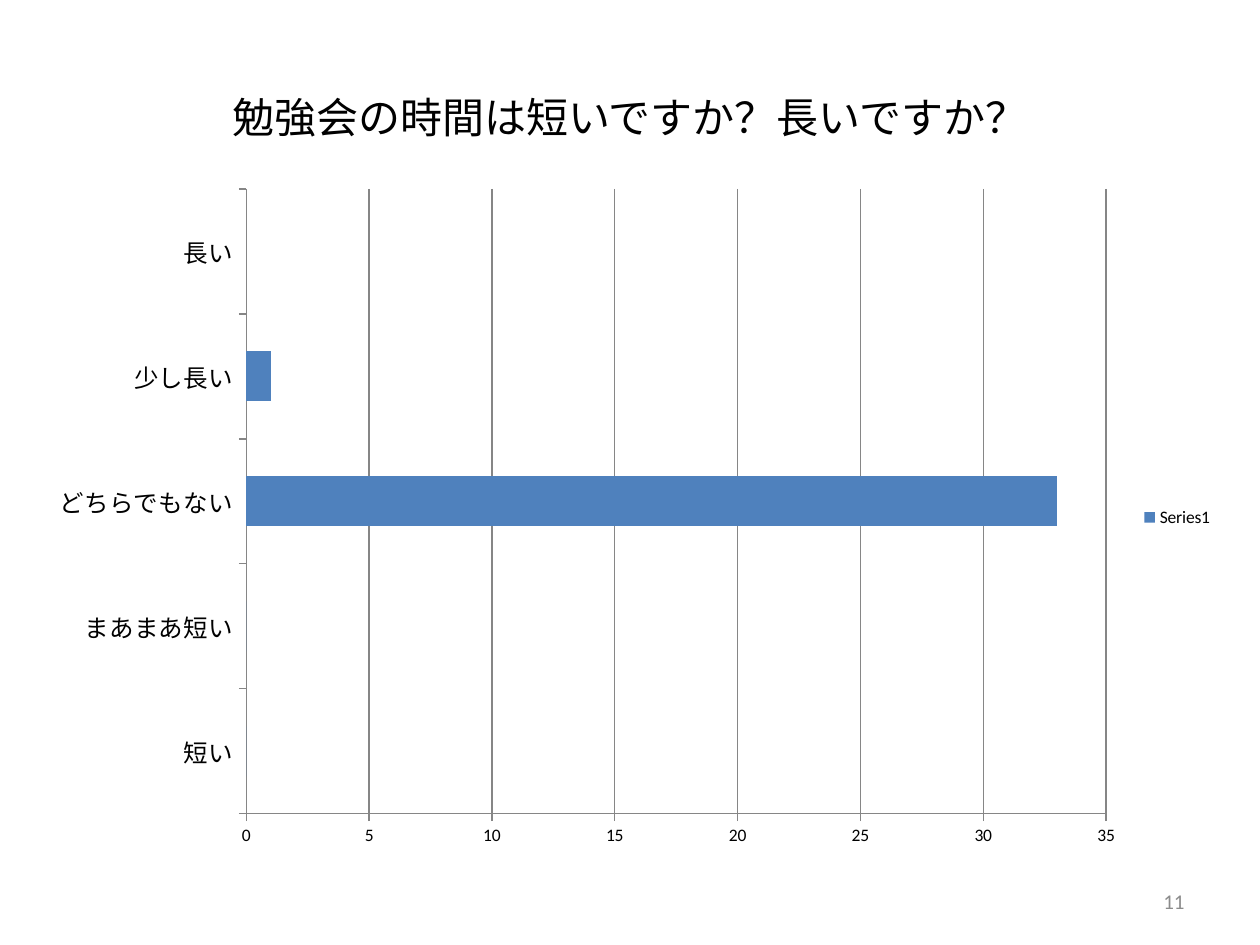
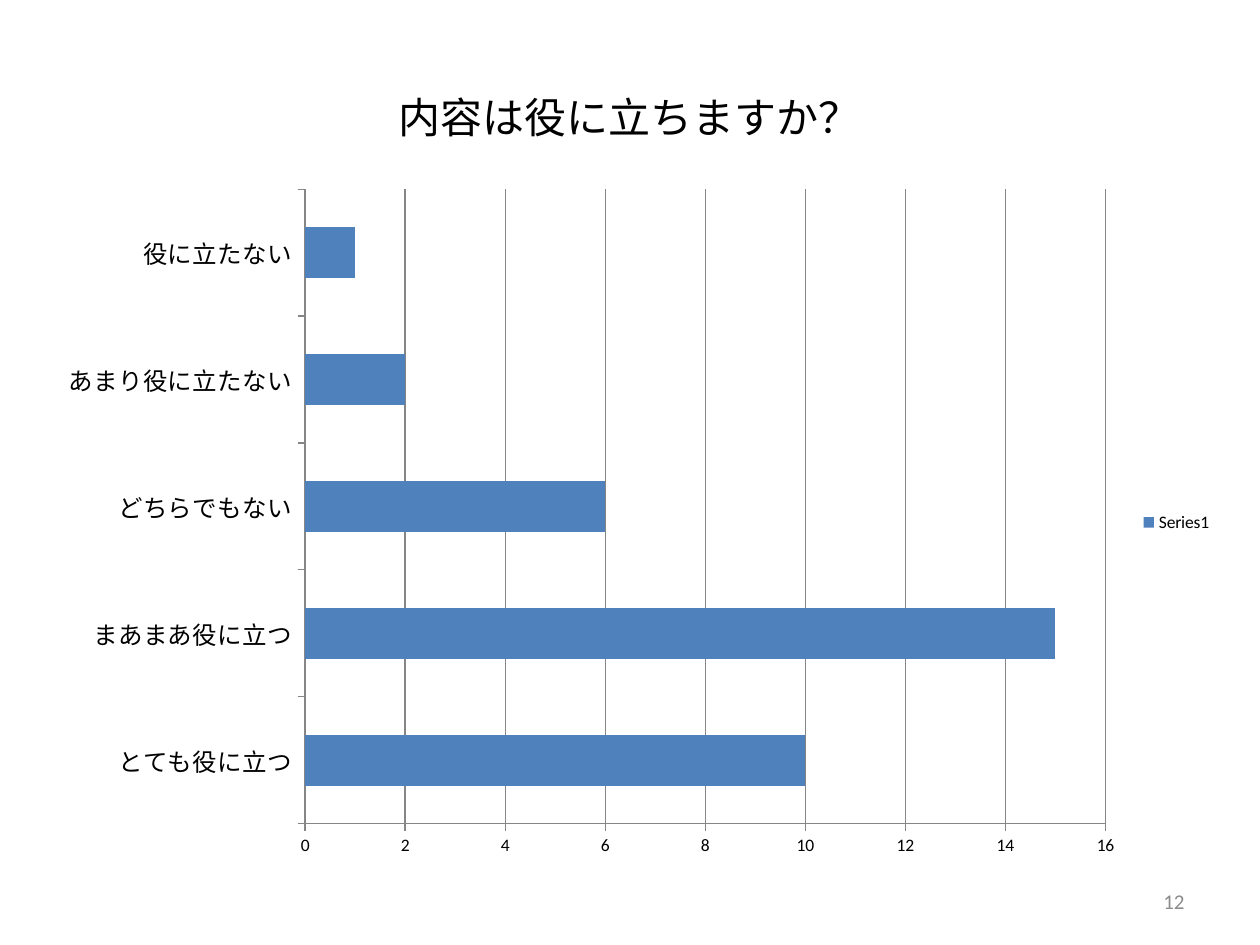
from pptx import Presentation
from pptx.chart.data import CategoryChartData
from pptx.dml.color import RGBColor
from pptx.enum.chart import XL_CHART_TYPE, XL_LEGEND_POSITION, XL_TICK_MARK
from pptx.enum.text import MSO_ANCHOR, PP_ALIGN
from pptx.util import Pt

BAR_CLUSTERED = XL_CHART_TYPE.BAR_CLUSTERED
LEGEND_RIGHT = XL_LEGEND_POSITION.RIGHT
TICK_OUTSIDE = XL_TICK_MARK.OUTSIDE
MIDDLE = MSO_ANCHOR.MIDDLE
CENTER, RIGHT = PP_ALIGN.CENTER, PP_ALIGN.RIGHT

BLACK = RGBColor(0x00, 0x00, 0x00)
NUMBER_GRAY = RGBColor(0x8C, 0x8C, 0x8C)
LINE_GRAY = RGBColor(0x86, 0x86, 0x86)
BAR_BLUE = RGBColor(0x4F, 0x81, 0xBD)
FONT = "Calibri"

# Areas are left, top, width, height in points.
TITLE_AREA = (36, 21.6, 648, 90)
NUMBER_AREA = (516, 500.5, 168, 28.75)
FIRST_NUMBER = 11
SERIES_NAME = "Series1"

QUESTIONS = [
    {
        "title": "勉強会の時間は短いですか？長いですか？",
        "answers": [("短い", 0), ("まあまあ短い", 0), ("どちらでもない", 33),
                    ("少し長い", 1), ("長い", None)],
        "area": (20.25, 100.2, 680.4, 391),
        "axis_end": 35,
        "axis_step": 5,
    },
    {
        "title": "内容は役に立ちますか？",
        "answers": [("とても役に立つ", 10), ("まあまあ役に立つ", 15),
                    ("どちらでもない", 6), ("あまり役に立たない", 2),
                    ("役に立たない", 1)],
        "area": (25.5, 100.2, 674.65, 396.75),
        "axis_end": 16,
        "axis_step": 2,
    },
]


def style_font(font, size, color):
    font.name = FONT
    font.size = Pt(size)
    font.color.rgb = color


def add_text(slide, text, area, size, color, alignment):
    box = slide.shapes.add_textbox(*map(Pt, area))
    frame = box.text_frame
    frame.word_wrap = True
    frame.vertical_anchor = MIDDLE
    frame.text = text
    para = frame.paragraphs[0]
    para.alignment = alignment
    style_font(para.runs[0].font, size, color)


def style_axis(axis, label_size):
    axis.major_tick_mark = TICK_OUTSIDE
    axis.format.line.color.rgb = LINE_GRAY
    axis.format.line.width = Pt(0.75)
    style_font(axis.tick_labels.font, label_size, BLACK)


def add_answer_chart(slide, question):
    labels, counts = zip(*question["answers"])
    chart_data = CategoryChartData()
    chart_data.categories = labels
    chart_data.add_series(SERIES_NAME, counts)
    chart = slide.shapes.add_chart(
        BAR_CLUSTERED, *map(Pt, question["area"]), chart_data).chart
    style_font(chart.font, 10, BLACK)
    chart.has_title = False

    chart.has_legend = True
    chart.legend.position = LEGEND_RIGHT
    chart.legend.include_in_layout = False

    plot = chart.plots[0]
    plot.gap_width = 150
    plot.vary_by_categories = False
    fill = plot.series[0].format.fill
    fill.solid()
    fill.fore_color.rgb = BAR_BLUE

    style_axis(chart.category_axis, 14)
    value_axis = chart.value_axis
    style_axis(value_axis, 10)
    value_axis.minimum_scale = 0
    value_axis.maximum_scale = question["axis_end"]
    value_axis.major_unit = question["axis_step"]
    value_axis.has_major_gridlines = True
    grid_line = value_axis.major_gridlines.format.line
    grid_line.color.rgb = LINE_GRAY
    grid_line.width = Pt(0.75)


def main():
    deck = Presentation()
    deck.slide_width, deck.slide_height = Pt(720), Pt(540)
    blank_layout = deck.slide_layouts[6]
    for number, question in enumerate(QUESTIONS, FIRST_NUMBER):
        slide = deck.slides.add_slide(blank_layout)
        add_text(slide, str(number), NUMBER_AREA, 12, NUMBER_GRAY, RIGHT)
        add_text(slide, question["title"], TITLE_AREA, 24, BLACK, CENTER)
        add_answer_chart(slide, question)
    deck.save("out.pptx")


if __name__ == "__main__":
    main()
